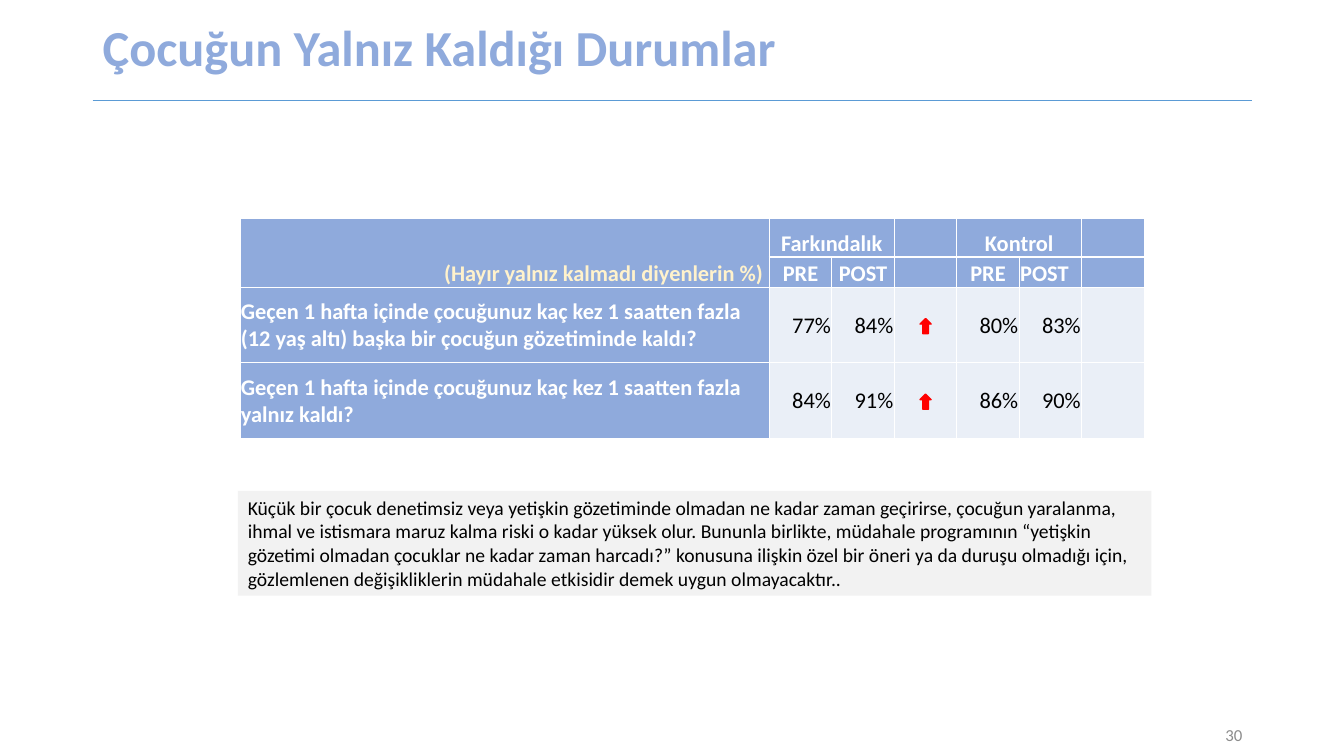
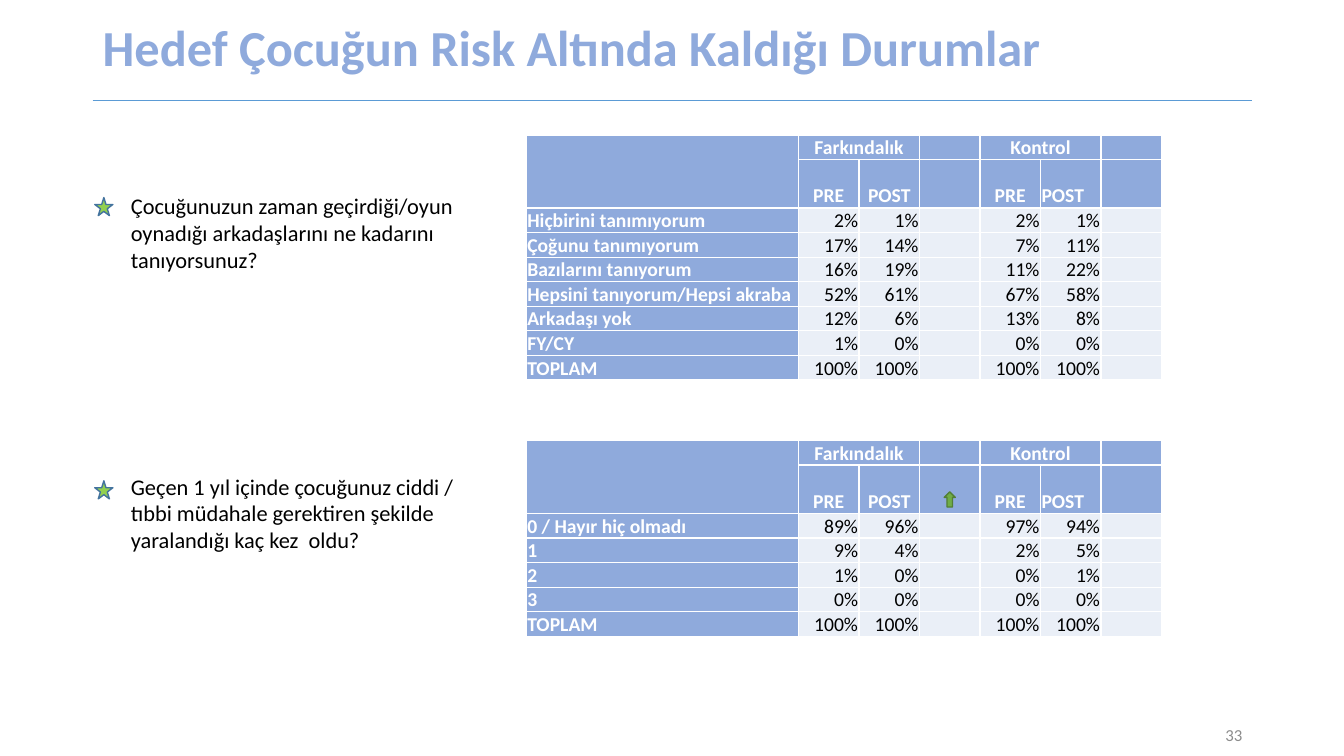
import pptx
import pptx.dml.color
import pptx.enum.shapes
import pptx.enum.text
import pptx.oxml.ns
import pptx.util
from lxml import etree

Inches = pptx.util.Inches
Pt = pptx.util.Pt
ALIGN = pptx.enum.text.PP_ALIGN
ANCHOR = pptx.enum.text.MSO_ANCHOR
SHAPE = pptx.enum.shapes.MSO_SHAPE
qn = pptx.oxml.ns.qn

FONT = "Calibri"
COLORS = {
    "header": "8FAADC", "body": "EAEFF7", "white": "FFFFFF", "black": "000000",
    "cream": "FFF2CC", "rule": "5B9BD5", "number": "8C8C8C", "note": "F2F2F2",
    "red": "FF0000", "star": "92D050", "star_line": "43739E",
    "green": "70AD47", "green_line": "538035",
}

# Content: rows hold a label, then PRE and POST of both groups
GROUPS = ["Farkındalık", "Kontrol"]
PHASES = ["PRE", "POST"]

ALONE_TABLE = {
    "left": 2.38, "top": 2.17, "label_width": 5.25, "value_width": 0.62,
    "header_heights": [0.38, 0.3], "row_height": 0.75, "size": 16,
    "anchor": ANCHOR.MIDDLE, "corner": "(Hayır yalnız kalmadı diyenlerin %)",
    "rows": [
        ("Geçen 1 hafta içinde çocuğunuz kaç kez 1 saatten fazla (12 yaş altı) "
         "başka bir çocuğun gözetiminde kaldı?", 77, 84, 80, 83),
        ("Geçen 1 hafta içinde çocuğunuz kaç kez 1 saatten fazla yalnız kaldı?",
         84, 91, 86, 90),
    ],
    "arrow_tops": [3.16, 3.91], "arrow_colors": ("red", "red"),
}
RISK_STYLE = {
    "left": 5.22, "label_width": 2.7, "value_width": 0.6,
    "header_heights": [0.24, 0.48], "row_height": 0.24, "size": 14,
    "anchor": ANCHOR.TOP, "corner": "", "arrow_colors": ("green", "green_line"),
}
FRIENDS_TABLE = {
    **RISK_STYLE, "top": 1.34, "arrow_tops": [],
    "rows": [
        ("Hiçbirini tanımıyorum", 2, 1, 2, 1),
        ("Çoğunu tanımıyorum", 17, 14, 7, 11),
        ("Bazılarını tanıyorum", 16, 19, 11, 22),
        ("Hepsini tanıyorum/Hepsi akraba", 52, 61, 67, 58),
        ("Arkadaşı yok", 12, 6, 13, 8),
        ("FY/CY", 1, 0, 0, 0),
        ("TOPLAM", 100, 100, 100, 100),
    ],
}
INJURY_TABLE = {
    **RISK_STYLE, "top": 4.37, "arrow_tops": [4.88],
    "rows": [
        ("0 / Hayır hiç olmadı", 89, 96, 97, 94),
        ("1", 9, 4, 2, 5),
        ("2", 1, 0, 0, 1),
        ("3", 0, 0, 0, 0),
        ("TOPLAM", 100, 100, 100, 100),
    ],
}
NOTE = (
    "Küçük bir çocuk denetimsiz veya yetişkin gözetiminde olmadan ne kadar zaman "
    "geçirirse, çocuğun yaralanma, ihmal ve istismara maruz kalma riski o kadar "
    "yüksek olur. Bununla birlikte, müdahale programının “yetişkin gözetimi olmadan "
    "çocuklar ne kadar zaman harcadı?” konusuna ilişkin özel bir öneri ya da duruşu "
    "olmadığı için, gözlemlenen değişikliklerin müdahale etkisidir demek uygun "
    "olmayacaktır.."
)
# Question text, top, width, star top
QUESTIONS = [
    ("Çocuğunuzun zaman geçirdiği/oyun oynadığı arkadaşlarını ne kadarını "
     "tanıyorsunuz?", 1.86, 3.44, 1.96),
    ("Geçen 1 yıl içinde çocuğunuz ciddi / tıbbi müdahale gerektiren şekilde "
     "yaralandığı kaç kez  oldu?", 4.64, 3.59, 4.77),
]
SLIDES = [
    {"title": "Çocuğun Yalnız Kaldığı Durumlar", "number": "30",
     "tables": [ALONE_TABLE], "note": NOTE, "questions": []},
    {"title": "Hedef Çocuğun Risk Altında Kaldığı Durumlar", "number": "33",
     "tables": [FRIENDS_TABLE, INJURY_TABLE], "note": "", "questions": QUESTIONS},
]


def rgb(name):
    return pptx.dml.color.RGBColor.from_string(COLORS[name])


def write(frame, text, size, color, bold=False, align=ALIGN.LEFT):
    frame.word_wrap = True
    frame.text = text
    para = frame.paragraphs[0]
    para.alignment = align
    for span in para.runs:
        span.font.name = FONT
        span.font.size = Pt(size)
        span.font.bold = bold
        span.font.color.rgb = rgb(color)
    return para


def add_text(page, area, text, size, color, anchor=ANCHOR.TOP, **style):
    box = page.shapes.add_textbox(*map(Inches, area))
    box.text_frame.vertical_anchor = anchor
    return write(box.text_frame, text, size, color, **style)


def add_figure(page, kind, area, fill, line=None):
    figure = page.shapes.add_shape(kind, *map(Inches, area))
    figure.shadow.inherit = False
    figure.fill.solid()
    figure.fill.fore_color.rgb = rgb(fill)
    if line:
        figure.line.color.rgb = rgb(line)
        figure.line.width = Pt(1)
    else:
        figure.line.fill.background()
    return figure


def add_frame(page, title, number):
    """Title, rule below it and slide number."""
    rule = page.shapes.add_connector(
        pptx.enum.shapes.MSO_CONNECTOR.STRAIGHT,
        Inches(0.92), Inches(1), Inches(12.42), Inches(1))
    rule.line.color.rgb = rgb("rule")
    rule.line.width = Pt(0.5)
    etree.SubElement(rule._element.spPr, qn("a:effectLst"))
    para = add_text(page, (0.92, 0, 11.5, 1), title, 36, "header",
                    anchor=ANCHOR.MIDDLE, bold=True)
    para.line_spacing = 0.9
    add_text(page, (9.42, 7.09, 3, 0.4), number, 12, "number",
             anchor=ANCHOR.MIDDLE, align=ALIGN.RIGHT)


def style_cell(cell, fill, anchor, size):
    cell.margin_left = cell.margin_right = cell.margin_top = Inches(0.01)
    cell.margin_bottom = 0
    cell.vertical_anchor = anchor
    properties = cell._tc.get_or_add_tcPr()
    for side in ("lnL", "lnR", "lnT", "lnB"):
        border = etree.SubElement(properties, qn("a:" + side), w=str(Pt(1)))
        paint = etree.SubElement(border, qn("a:solidFill"))
        etree.SubElement(paint, qn("a:srgbClr"), val=COLORS["white"])
    cell.fill.solid()
    cell.fill.fore_color.rgb = rgb(fill)
    # Keeps empty cells from stretching their row
    etree.SubElement(cell.text_frame.paragraphs[0]._p, qn("a:endParaRPr"),
                     sz=str(size * 100))


def add_results(page, data):
    size = data["size"]
    widths = [data["label_width"]] + [data["value_width"]] * 6
    heights = data["header_heights"] + [data["row_height"]] * len(data["rows"])
    table = page.shapes.add_table(
        len(heights), len(widths), Inches(data["left"]), Inches(data["top"]),
        Inches(sum(widths)), Inches(sum(heights))).table
    table.first_row = table.horz_banding = False
    for column, width in zip(table.columns, widths):
        column.width = Inches(width)
    for row, height in zip(table.rows, heights):
        row.height = Inches(height)
    for r in range(len(heights)):
        for c in range(len(widths)):
            header = r < 2
            style_cell(table.cell(r, c), "header" if header or c == 0 else "body",
                       ANCHOR.BOTTOM if header else data["anchor"], size)

    def put(r, c, text, color="white", bold=True, align=ALIGN.LEFT):
        write(table.cell(r, c).text_frame, text, size, color, bold, align)

    # Header: each group spans two columns and is followed by a marker column
    corner = table.cell(0, 0)
    corner.merge(table.cell(1, 0))
    if data["corner"]:
        put(0, 0, data["corner"], "cream", align=ALIGN.RIGHT)
        corner.margin_right = Inches(0.06)
    value_columns = []
    for g, group in enumerate(GROUPS):
        first = 1 + 3 * g
        table.cell(0, first).merge(table.cell(0, first + 1))
        put(0, first, group, align=ALIGN.CENTER)
        for p, phase in enumerate(PHASES):
            last = (g, p) == (1, 1)
            put(1, first + p, phase, align=ALIGN.LEFT if last else ALIGN.CENTER)
            value_columns.append(first + p)

    # Body
    for r, (label, *values) in enumerate(data["rows"], start=2):
        put(r, 0, label)
        for c, value in zip(value_columns, values):
            put(r, c, f"{value}%", "black", False, ALIGN.RIGHT)

    # Arrows centred in the first marker column
    center = data["left"] + sum(widths[:3]) + widths[3] / 2
    for top in data["arrow_tops"]:
        add_figure(page, SHAPE.UP_ARROW, (center - 0.055, top, 0.11, 0.15),
                   *data["arrow_colors"])


def main():
    deck = pptx.Presentation()
    deck.slide_width, deck.slide_height = Inches(13.33), Inches(7.5)
    for content in SLIDES:
        page = deck.slides.add_slide(deck.slide_layouts[6])
        add_frame(page, content["title"], content["number"])
        for data in content["tables"]:
            add_results(page, data)
        if content["note"]:
            panel = add_figure(page, SHAPE.RECTANGLE, (2.36, 4.87, 9.06, 1.04), "note")
            panel.text_frame.vertical_anchor = ANCHOR.TOP
            write(panel.text_frame, content["note"], 14, "black")
        for text, top, width, star_top in content["questions"]:
            add_text(page, (1.2, top, width, 0.91), text, 16, "black")
            add_figure(page, SHAPE.STAR_5_POINT, (0.94, star_top, 0.18, 0.18),
                       "star", "star_line")
    deck.save("out.pptx")


if __name__ == "__main__":
    main()
